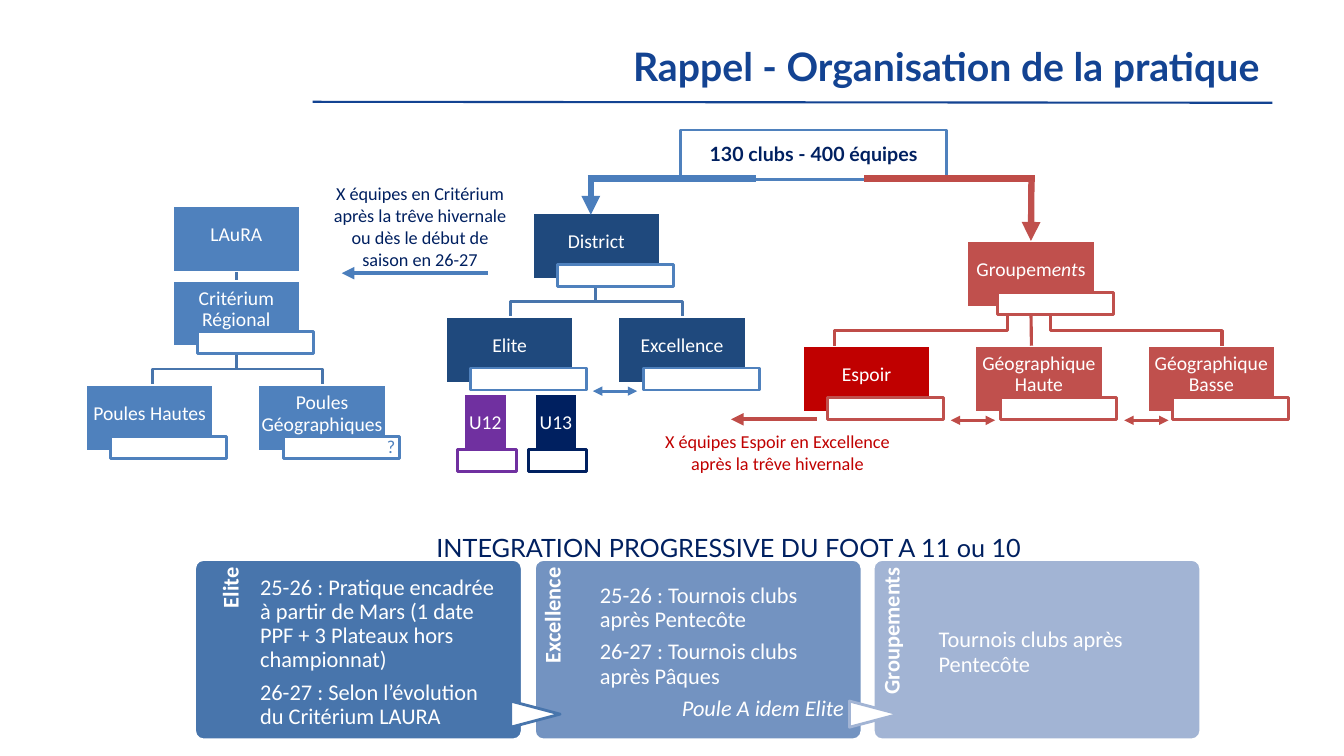
"""Build the slide on how youth football practice is organised."""
from dataclasses import dataclass, replace
from typing import Any

from lxml.etree import SubElement
from pptx import Presentation
from pptx.dml.color import RGBColor
from pptx.enum.shapes import MSO_CONNECTOR, MSO_SHAPE
from pptx.enum.text import MSO_ANCHOR, PP_ALIGN
from pptx.oxml.ns import qn
from pptx.util import Emu, Pt

PX = 9144
WHITE = RGBColor(0xFF, 0xFF, 0xFF)
TITLE_BLUE = RGBColor(0x13, 0x43, 0x92)
NAVY = RGBColor(0x00, 0x20, 0x60)
BLUE = RGBColor(0x4F, 0x81, 0xBD)
ARROW_BLUE = RGBColor(0x4B, 0x7E, 0xBC)
STEEL = RGBColor(0x48, 0x75, 0xAC)
MID_STEEL = RGBColor(0x73, 0x93, 0xC1)
PALE_STEEL = RGBColor(0xA2, 0xB4, 0xD4)
DARK_BLUE = RGBColor(0x1F, 0x49, 0x7D)
RED = RGBColor(0xC0, 0x50, 0x4D)
ARROW_RED = RGBColor(0xBF, 0x4C, 0x48)
DEEP_RED = RGBColor(0xC0, 0x00, 0x00)
PURPLE = RGBColor(0x70, 0x30, 0xA0)
LEFT, CENTER, RIGHT = PP_ALIGN.LEFT, PP_ALIGN.CENTER, PP_ALIGN.RIGHT
TOP, MIDDLE = MSO_ANCHOR.TOP, MSO_ANCHOR.MIDDLE


@dataclass(frozen=True)
class Style:
    size: int
    color: RGBColor
    name: str = "Calibri"
    bold: bool = False
    align: PP_ALIGN = CENTER
    anchor: MSO_ANCHOR = TOP
    margins: tuple[int, int, int, int] = (10, 5, 10, 5)
    spacing: float = 1.0
    after: int = 0
    wrap: bool = True


@dataclass(frozen=True)
class Card:
    text: str
    left: int
    top: int
    fill: RGBColor
    outline: RGBColor = BLUE
    width: int = 127
    tag: tuple[int, int, int] | None = (25, 51, 115)
    tag_text: str = ""


@dataclass(frozen=True)
class Branch:
    points: tuple[tuple[int, int], ...]
    color: RGBColor
    weight: float


@dataclass(frozen=True)
class Link:
    start: tuple[int, int]
    end: tuple[int, int]
    color: RGBColor
    weight: float
    heads: tuple[str, ...] = ()
    source: str = ""
    target: str = ""


@dataclass(frozen=True)
class Panel:
    heading: str
    left: int
    fill: RGBColor
    anchor: MSO_ANCHOR
    lines: tuple[tuple[str, PP_ALIGN], ...]


CARD_STYLE = Style(14, WHITE, anchor=MIDDLE, margins=(1, 1, 1, 9), spacing=0.9, after=5)
TAG_STYLE = Style(13, BLUE, align=RIGHT, anchor=MIDDLE, margins=(4, 1, 4, 1), spacing=0.9)
CLUBS_STYLE = Style(14, NAVY, "Lato", True, CENTER, MIDDLE, (4, 1, 4, 1), 0.9, 5)
HEADING_STYLE = Style(16, WHITE, bold=True, align=RIGHT, margins=(0, 6, 8, 0), spacing=0.9)
PANEL_STYLE = Style(16, WHITE, align=LEFT, anchor=MIDDLE, margins=(0, 6, 0, 0), spacing=0.9, after=6)
TITLE_STYLE = Style(28, TITLE_BLUE, "Lato", True, RIGHT, MSO_ANCHOR.BOTTOM)
BANNER_STYLE = Style(18, NAVY, "Lato", align=LEFT, wrap=False)

CARDS = (
    Card("District", 528, 211, DARK_BLUE),
    Card("Elite", 442, 314, DARK_BLUE),
    Card("Excellence", 613, 314, DARK_BLUE),
    Card("Groupem*ent*s", 959, 239, RED, RED, tag=(30, 51, 115)),
    Card("Espoir", 796, 343, DEEP_RED, RED),
    Card("Géographique Haute", 967, 343, RED, RED),
    Card("Géographique Basse", 1138, 343, RED, RED),
    Card("LAuRA", 171, 204, BLUE, tag=None),
    Card("Critérium Régional", 171, 278, BLUE),
    Card("Poules Hautes", 85, 382, BLUE),
    Card("Poules Géographiques", 256, 382, BLUE, tag_text="?"),
    Card("U13", 530, 391, NAVY, NAVY, 43, (-6, 55, 58)),
    Card("U12", 460, 391, PURPLE, PURPLE, 43, (-6, 55, 58)),
)
BRANCHES = (
    Branch(((1042, 305), (1042, 328), (1212, 328), (1212, 343)), ARROW_RED, 2.25),
    Branch(((999, 305), (999, 328), (828, 328), (828, 343)), ARROW_RED, 2.25),
    Branch(((591, 276), (591, 299), (677, 299), (677, 314)), STEEL, 2),
    Branch(((591, 276), (591, 299), (506, 299), (506, 314)), STEEL, 2),
    Branch(((235, 343), (235, 366), (320, 366), (320, 381)), STEEL, 2),
    Branch(((235, 343), (235, 366), (151, 366), (151, 381)), STEEL, 2),
)
ONE_WAY, TWO_WAY = ("tailEnd",), ("headEnd", "tailEnd")
LINKS = (
    Link((310, 101), (1262, 102), TITLE_BLUE, 1.5),
    Link((1023, 305), (1023, 343), ARROW_RED, 2.25, source="Groupem*ent*s"),
    Link((234, 270), (234, 278), STEEL, 2, (), "LAuRA", "Critérium Régional"),
    Link((588, 388), (632, 388), ARROW_BLUE, 2.25, TWO_WAY),
    Link((943, 417), (987, 417), ARROW_RED, 2.25, TWO_WAY),
    Link((1115, 417), (1159, 417), ARROW_RED, 2.25, TWO_WAY),
    Link((810, 416), (725, 416), ARROW_RED, 3, ONE_WAY),
    Link((857, 177), (1027, 177), ARROW_RED, 4.5),
    Link((1023, 179), (1023, 239), RED, 4.5, ONE_WAY, target="Groupem*ent*s"),
    Link((583, 177), (750, 177), ARROW_BLUE, 4.5),
    Link((586, 180), (586, 213), ARROW_BLUE, 4.5, ONE_WAY),
    Link((484, 271), (339, 271), ARROW_BLUE, 3, ONE_WAY),
)
PANELS = (
    Panel("Elite", 193, STEEL, MIDDLE, (
        ("25-26 : Pratique encadrée à partir de Mars (1 date PPF + 3 Plateaux hors championnat)", LEFT),
        ("26-27 : Selon l’évolution du Critérium LAURA", LEFT))),
    Panel("Excellence", 530, MID_STEEL, TOP, (
        ("25-26 : Tournois clubs après Pentecôte", LEFT),
        ("26-27 : Tournois clubs après Pâques", LEFT),
        ("*Poule A idem Elite*", RIGHT))),
    Panel("Groupements", 866, PALE_STEEL, TOP, (("Tournois clubs après Pentecôte", LEFT),)),
)


def apply(target: Any, values: dict[str, Any]) -> None:
    for key, value in values.items():
        setattr(target, key, value)


def write(box: Any, style: Style, *lines: tuple[str, PP_ALIGN]) -> None:
    frame = box.text_frame
    margins = zip(("margin_left", "margin_top", "margin_right", "margin_bottom"), style.margins)
    apply(frame, {side: Emu(size * PX) for side, size in margins})
    apply(frame, {"word_wrap": style.wrap, "vertical_anchor": style.anchor})
    for index, (text, align) in enumerate(lines):
        para = frame.add_paragraph() if index else frame.paragraphs[0]
        apply(para, {"alignment": align, "line_spacing": style.spacing, "space_after": Pt(style.after)})
        for order, piece in enumerate(text.split("*")):
            if piece:
                span = para.add_run()
                span.text = piece
                apply(span.font, {"size": Pt(style.size), "name": style.name,
                                  "bold": style.bold, "italic": order % 2 == 1})
                span.font.color.rgb = style.color


def add_box(page: Any, kind: MSO_SHAPE, place: tuple[int, ...], fill: RGBColor, outline: RGBColor) -> Any:
    box = page.shapes.add_shape(kind, *(Emu(n * PX) for n in place))
    box.shadow.inherit = False
    box.fill.solid()
    box.fill.fore_color.rgb = fill
    box.line.color.rgb = outline
    box.line.width = Pt(2)
    return box


def add_text(page: Any, place: tuple[int, ...], style: Style, *lines: tuple[str, PP_ALIGN]) -> Any:
    box = page.shapes.add_textbox(*(Emu(n * PX) for n in place))
    write(box, style, *lines)
    return box


def add_branch(page: Any, branch: Branch) -> None:
    builder = page.shapes.build_freeform(*branch.points[0], scale=float(PX))
    builder.add_line_segments(branch.points[1:], close=False)
    path = builder.convert_to_shape()
    path.shadow.inherit = False
    path.fill.background()
    path.line.color.rgb = branch.color
    path.line.width = Pt(branch.weight)


def add_link(page: Any, link: Link, cards: dict[str, Any]) -> None:
    ends = (Emu(n * PX) for n in link.start + link.end)
    line = page.shapes.add_connector(MSO_CONNECTOR.STRAIGHT, *ends)
    line.line.color.rgb = link.color
    line.line.width = Pt(link.weight)
    for head in link.heads:
        SubElement(line.line._get_or_add_ln(), qn(f"a:{head}"), type="triangle")
    SubElement(line._element.spPr, qn("a:effectLst"))
    if link.source:
        line.begin_connect(cards[link.source], 2)
    if link.target:
        line.end_connect(cards[link.target], 0)


def add_tag(page: Any, card: Card) -> None:
    if card.tag:
        across, down, width = card.tag
        place = (card.left + across, card.top + down, width, 22)
        tag = add_box(page, MSO_SHAPE.RECTANGLE, place, WHITE, card.outline)
        if card.tag_text:
            write(tag, TAG_STYLE, (card.tag_text, RIGHT))


def add_panel(page: Any, panel: Panel) -> None:
    box = add_box(page, MSO_SHAPE.ROUNDED_RECTANGLE, (panel.left, 555, 325, 179), panel.fill, WHITE)
    box.adjustments[0] = 0.05
    style = replace(HEADING_STYLE, anchor=panel.anchor)
    heading = add_text(page, (panel.left - 40, 596, 147, 65), style, (panel.heading, RIGHT))
    heading.rotation = 270
    add_text(page, (panel.left + 65, 555, 242, 179), PANEL_STYLE, *panel.lines)


def main() -> None:
    deck = Presentation()
    apply(deck, {"slide_width": Emu(1333 * PX), "slide_height": Emu(750 * PX)})
    page = deck.slides.add_slide(deck.slide_layouts[5])
    title = page.shapes.title
    apply(title, {"left": Emu(293 * PX), "top": Emu(0), "width": Emu(966 * PX), "height": Emu(94 * PX)})
    write(title, TITLE_STYLE, ("Rappel - Organisation de la pratique", RIGHT))
    clubs = add_box(page, MSO_SHAPE.RECTANGLE, (675, 129, 264, 49), WHITE, BLUE)
    write(clubs, CLUBS_STYLE, ("130 clubs - 400 équipes", CENTER))
    cards = {}
    for card in CARDS:
        place = (card.left, card.top, card.width, 66)
        cards[card.text] = add_box(page, MSO_SHAPE.RECTANGLE, place, card.fill, WHITE)
        write(cards[card.text], CARD_STYLE, (card.text, CENTER))
    for branch in BRANCHES:
        add_branch(page, branch)
    for link in LINKS:
        add_link(page, link, cards)
    for card in CARDS:
        add_tag(page, card)
    add_text(page, (639, 422, 264, 54), Style(13, DEEP_RED),
             ("X équipes Espoir en Excellence", CENTER), ("après la trêve hivernale", CENTER))
    add_text(page, (318, 176, 197, 98), Style(13, NAVY),
             ("X équipes en Critérium après la trêve hivernale ou dès le début de saison en 26-27", CENTER))
    for panel in PANELS:
        add_panel(page, panel)
    for panel, outline in zip(PANELS[1:], (STEEL, PALE_STEEL)):
        arrow = add_box(page, MSO_SHAPE.FLOWCHART_EXTRACT, (panel.left - 12, 684, 26, 49), WHITE, outline)
        arrow.rotation = 90
    add_text(page, (423, 523, 610, 40), BANNER_STYLE, ("INTEGRATION PROGRESSIVE DU FOOT A 11 ou 10", LEFT))
    deck.save("out.pptx")


if __name__ == "__main__":
    main()
